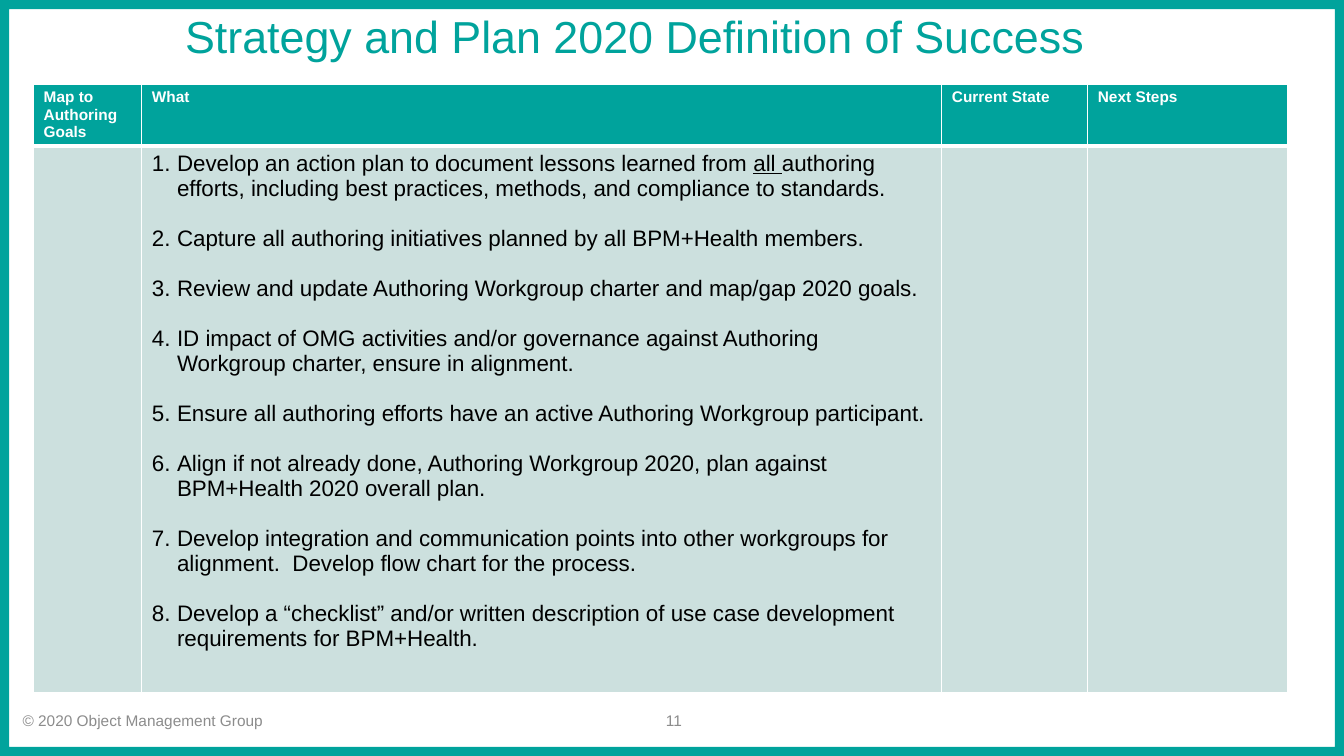
from typing import Any, NamedTuple

from lxml import etree
from pptx import Presentation, util as u
from pptx.dml.color import RGBColor
from pptx.enum import shapes, text
from pptx.oxml import ns

PX = 9525
FONT = "Arial"
TEAL = RGBColor(0x00, 0xA3, 0x9C)
PALE_TEAL = RGBColor(0xCC, 0xE0, 0xDE)
WHITE = RGBColor(0xFF, 0xFF, 0xFF)
BLACK = RGBColor(0x00, 0x00, 0x00)
GRAY = RGBColor(0x8C, 0x8C, 0x8C)


class Style(NamedTuple):
    size: int
    color: RGBColor
    bold: bool = False


class Label(NamedTuple):
    words: str
    left: int
    top: int
    width: int
    height: int
    style: Style
    align: text.PP_ALIGN
    spacing: float = 1.0


class Column(NamedTuple):
    heading: str
    width: int


TITLE = Style(32, TEAL)
FOOTER = Style(11, GRAY)
HEADING = Style(11, WHITE, True)
BODY = Style(16, BLACK)

LABELS = [
    Label("Strategy and Plan 2020 Definition of Success", 53, -32, 1104, 139,
          TITLE, text.PP_ALIGN.CENTER, 0.9),
    Label("© 2020 Object Management Group", 12, 667, 419, 38, FOOTER, text.PP_ALIGN.LEFT),
    Label("11", 620, 667, 39, 38, FOOTER, text.PP_ALIGN.RIGHT),
]
COLUMNS = [
    Column("Map to Authoring Goals", 103),
    Column("What", 762),
    Column("Current State", 139),
    Column("Next Steps", 190),
]
ROW_HEIGHTS = [59, 521]
GOALS_COLUMN = 1
UNDERLINED = "all "
GOALS = [
    ["Develop an action plan to document lessons learned from ", UNDERLINED,
     "authoring efforts, including best practices, methods, and compliance to standards."],
    ["Capture all authoring initiatives planned by all BPM+Health members."],
    ["Review and update Authoring Workgroup charter and map/gap 2020 goals."],
    ["ID impact of OMG activities and/or governance against Authoring Workgroup charter, "
     "ensure in alignment."],
    ["Ensure all authoring efforts have an active Authoring Workgroup participant."],
    ["Align if not already done, Authoring Workgroup 2020, plan against "
     "BPM+Health 2020 overall plan."],
    ["Develop integration and communication points into other workgroups for alignment.\u00a0 "
     "Develop flow chart for the process."],
    ["Develop a “checklist” and/or written description of use case development "
     "requirements for BPM+Health."],
]


def px(length: int) -> u.Emu:
    return u.Emu(length * PX)


def add_span(para: Any, words: str, style: Style, underline: bool = False) -> None:
    span = para.add_run()
    span.text = words
    values = {"name": FONT, "size": u.Pt(style.size), "bold": style.bold,
              "underline": underline}
    for name, value in values.items():
        setattr(span.font, name, value)
    span.font.color.rgb = style.color


def add_frame(page: Any, deck: Any) -> None:
    frame = page.shapes.add_shape(shapes.MSO_SHAPE.FRAME, 0, 0,
                                  deck.slide_width, deck.slide_height)
    frame.adjustments[0] = 0.012
    frame.shadow.inherit = False
    frame.fill.solid()
    frame.fill.fore_color.rgb = TEAL
    frame.line.fill.background()


def add_label(page: Any, label: Label) -> None:
    box = page.shapes.add_textbox(*map(px, label[1:5]))
    box.text_frame.word_wrap = True
    box.text_frame.vertical_anchor = text.MSO_ANCHOR.MIDDLE
    para = box.text_frame.paragraphs[0]
    para.alignment = label.align
    para.line_spacing = label.spacing
    add_span(para, label.words, label.style)


def format_cell(cell: Any, fill: RGBColor, borders: dict[str, int]) -> None:
    properties = cell._tc.get_or_add_tcPr()
    for side, points in borders.items():
        line = etree.SubElement(properties, ns.qn(f"a:ln{side}"), w=str(u.Pt(points)))
        solid = etree.SubElement(line, ns.qn("a:solidFill"))
        etree.SubElement(solid, ns.qn("a:srgbClr"), val=str(WHITE))
    cell.fill.solid()
    cell.fill.fore_color.rgb = fill


def add_goals(cell: Any) -> None:
    for number, pieces in enumerate(GOALS, 1):
        first = number == 1
        para = cell.text_frame.paragraphs[0] if first else cell.text_frame.add_paragraph()
        if not first:
            para.space_before = u.Pt(18)
        properties = para._p.get_or_add_pPr()
        properties.set("marL", str(px(24)))
        properties.set("indent", str(-px(24)))
        etree.SubElement(properties, ns.qn("a:buFont"), typeface=FONT)
        etree.SubElement(properties, ns.qn("a:buAutoNum"), type="arabicPeriod",
                         startAt=str(number))
        for piece in pieces:
            add_span(para, piece, BODY, piece == UNDERLINED)


def add_plan_table(page: Any) -> None:
    width = sum(column.width for column in COLUMNS)
    table = page.shapes.add_table(len(ROW_HEIGHTS), len(COLUMNS), px(32), px(80),
                                  px(width), px(sum(ROW_HEIGHTS))).table
    table.horz_banding = False
    for row, height in zip(table.rows, ROW_HEIGHTS):
        row.height = px(height)
    for index, column in enumerate(COLUMNS):
        table.columns[index].width = px(column.width)
        header, body = table.cell(0, index), table.cell(1, index)
        format_cell(header, TEAL, {"L": 1, "R": 1, "T": 1, "B": 3})
        format_cell(body, PALE_TEAL, {"L": 1, "R": 1, "T": 3, "B": 1})
        add_span(header.text_frame.paragraphs[0], column.heading, HEADING)
    add_goals(table.cell(1, GOALS_COLUMN))


def main() -> None:
    deck = Presentation()
    deck.slide_width, deck.slide_height = px(1280), px(720)
    page = deck.slides.add_slide(deck.slide_layouts[6])
    add_frame(page, deck)
    add_plan_table(page)
    for label in LABELS:
        add_label(page, label)
    deck.save("out.pptx")


if __name__ == "__main__":
    main()
